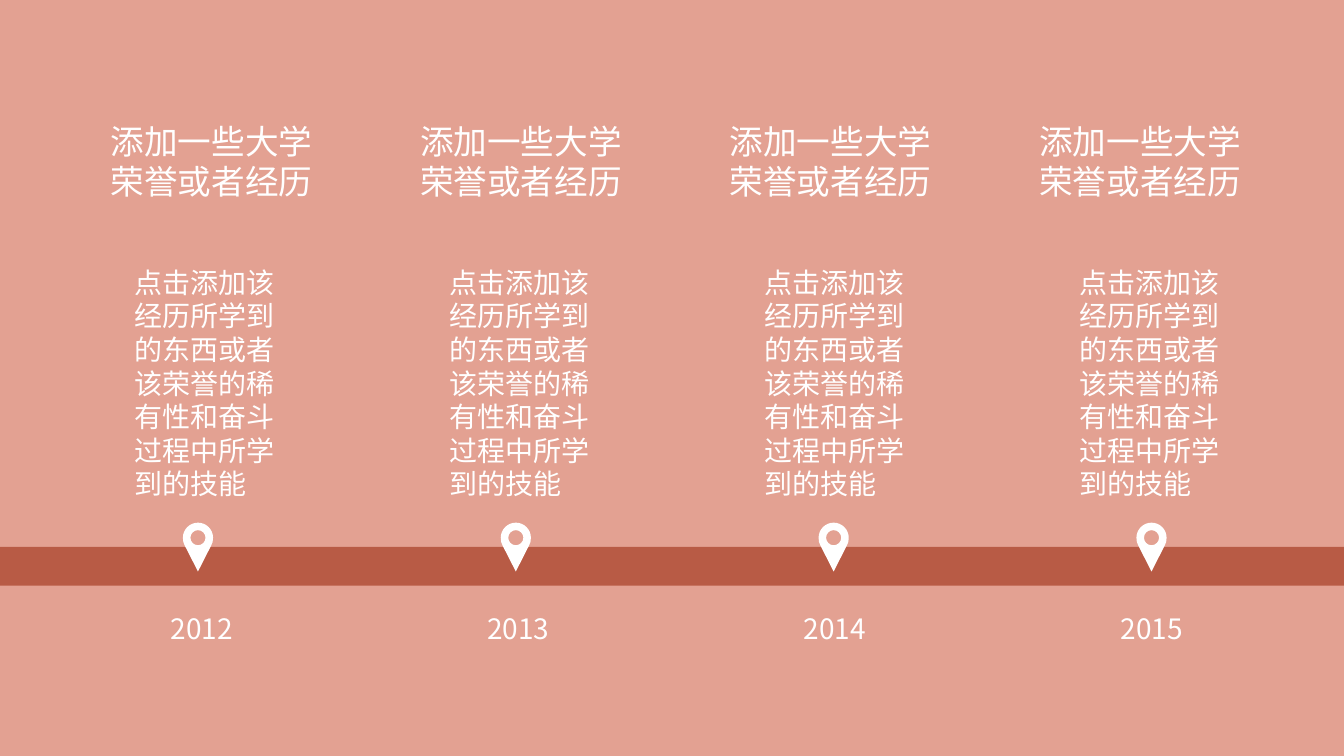
from lxml import etree
from pptx import Presentation
from pptx.dml.color import RGBColor
from pptx.enum.shapes import MSO_SHAPE
from pptx.enum.text import MSO_AUTO_SIZE
from pptx.oxml.ns import qn
from pptx.util import Cm, Pt

# Content
YEARS = ["2012", "2013", "2014", "2015"]
HEADINGS = ["添加一些大学荣誉或者经历"] * len(YEARS)
DETAILS = ["点击添加该经历所学到的东西或者该荣誉的稀有性和奋斗过程中所学到的技能"] * len(YEARS)

# Text rows: texts, first left, column step, top, width, height in cm, size in points
ROWS = [
    (YEARS, 4.05, 7.98, 15.29, 2.82, 1.12, 20),
    (HEADINGS, 2.54, 7.8, 2.92, 6.15, 2.31, 24),
    (DETAILS, 3.14, 7.94, 6.56, 4.65, 6.25, 20),
]

# Map pins in cm; curve points in pin radii, three to a curve after the start
PIN_X, PIN_STEP, PIN_Y, PIN_RADIUS = 4.99, 8.01, 13.55, 0.38
HALF_CIRCLE = [(1, 0), (1, -0.55), (0.55, -1), (0, -1),
               (-0.55, -1), (-1, -0.55), (-1, 0)]
POINT = ([(-1, 0.2), (-0.97, 0.38), (-0.87, 0.53)] + [(0, 2.24)] * 3
         + [(0.87, 0.53)] * 3 + [(0.97, 0.38), (1, 0.2), (1, 0)])
PIN_OUTLINE = HALF_CIRCLE + POINT
PIN_HOLE = [(x / 2, y / 2) for x, y in
            HALF_CIRCLE + [(-x, -y) for x, y in HALF_CIRCLE[1:]]]

FONT = "Noto Sans CJK SC"
WHITE = RGBColor(0xFF, 0xFF, 0xFF)
PINK = RGBColor(0xE3, 0xA1, 0x92)
BRICK = RGBColor(0xA9, 0x43, 0x2B)
RECTANGLE = MSO_SHAPE.RECTANGLE
GROW = MSO_AUTO_SIZE.SHAPE_TO_FIT_TEXT


def paint(sp, color):
    sp.shadow.inherit = False
    sp.fill.solid()
    sp.fill.fore_color.rgb = color
    sp.line.fill.background()


def add_text(slide, text, left, top, width, height, size):
    sp = slide.shapes.add_textbox(Cm(left), Cm(top), Cm(width), Cm(height))
    tf = sp.text_frame
    tf.word_wrap = True
    tf.auto_size = GROW
    r = tf.paragraphs[0].add_run()
    r.text = text
    r.font.size = Pt(size)
    r.font.name = FONT
    r.font.color.rgb = WHITE
    etree.SubElement(r._r.get_or_add_rPr(), qn("a:ea"), typeface=FONT)


def add_pin(slide, center):
    outline, hole = [
        [(Cm(center + x * PIN_RADIUS), Cm(PIN_Y + y * PIN_RADIUS)) for x, y in points]
        for points in (PIN_OUTLINE, PIN_HOLE)]
    fb = slide.shapes.build_freeform(*outline[0])
    fb.add_line_segments(outline[1:])
    fb.move_to(*hole[0])
    fb.add_line_segments(hole[1:])
    sp = fb.convert_to_shape()
    paint(sp, WHITE)

    # Merge every three line segments into one Bezier curve
    lines = list(sp._element.iter(qn("a:lnTo")))
    for i in range(0, len(lines), 3):
        curve = etree.Element(qn("a:cubicBezTo"))
        lines[i].addprevious(curve)
        for line in lines[i:i + 3]:
            curve.append(line[0])
            line.getparent().remove(line)


def main():
    prs = Presentation()
    prs.slide_width, prs.slide_height = Cm(33.87), Cm(19.05)
    slide = prs.slides.add_slide(prs.slide_layouts[6])
    slide.background.fill.solid()
    slide.background.fill.fore_color.rgb = PINK

    # Translucent timeline bar
    bar = slide.shapes.add_shape(RECTANGLE, 0, Cm(13.78), prs.slide_width, Cm(0.98))
    paint(bar, BRICK)
    color = bar._element.spPr.find(qn("a:solidFill"))[0]
    etree.SubElement(color, qn("a:alpha"), val="74000")

    # One pin per year
    for i in range(len(YEARS)):
        add_pin(slide, PIN_X + i * PIN_STEP)

    # Years, headings and details
    for texts, left, step, top, width, height, size in ROWS:
        for i, text in enumerate(texts):
            add_text(slide, text, left + i * step, top, width, height, size)

    prs.save("out.pptx")


if __name__ == "__main__":
    main()
